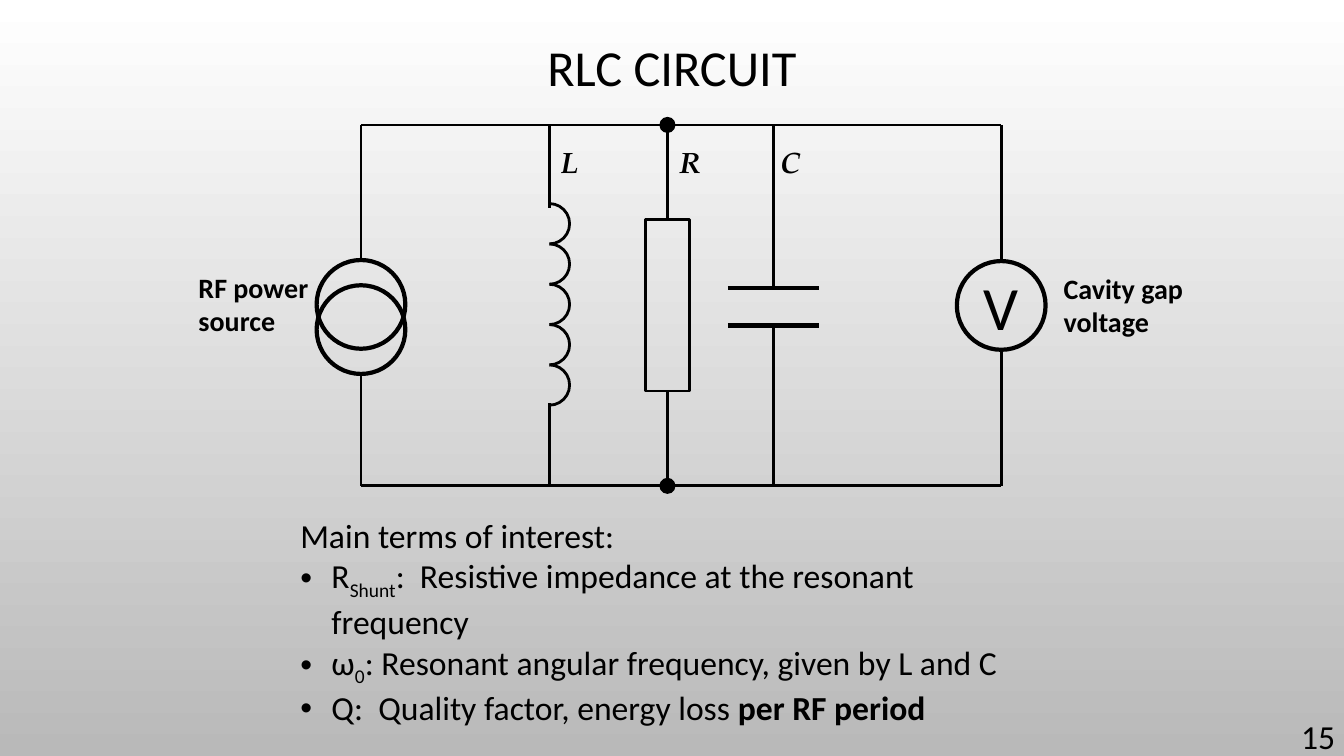
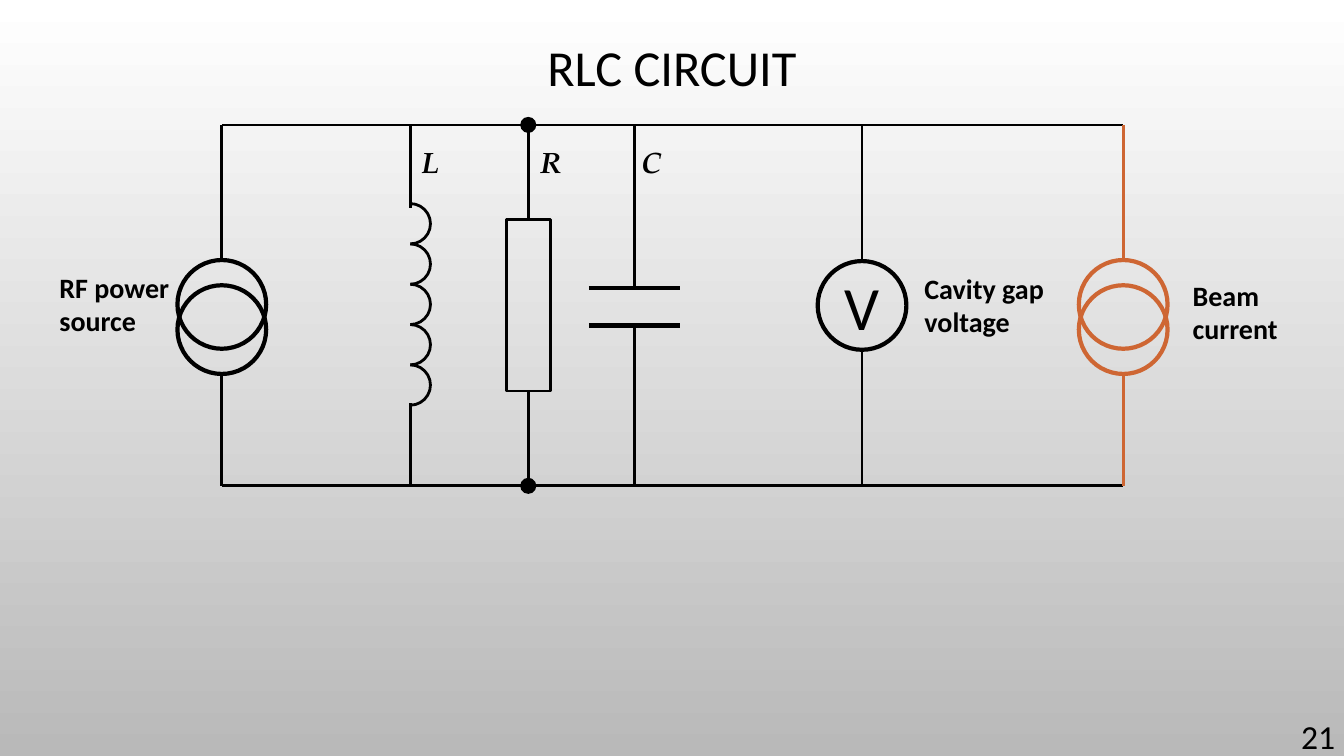
"""Build two slides showing an RLC circuit, without and with beam current."""
from lxml import etree
from pptx import Presentation
from pptx.dml.color import RGBColor
from pptx.enum.shapes import MSO_CONNECTOR as CONN, MSO_SHAPE as SHAPE
from pptx.enum.text import MSO_ANCHOR as ANCHOR, PP_ALIGN as ALIGN
from pptx.oxml.ns import qn
from pptx.util import Inches, Pt

BLACK = RGBColor(0x00, 0x00, 0x00)
WHITE = RGBColor(0xFF, 0xFF, 0xFF)
GREY = RGBColor(0xB9, 0xB9, 0xB9)
ORANGE = RGBColor(0xCE, 0x66, 0x33)
SANS, SERIF = "Calibri", "TeX Gyre Pagella"

TOP, BOTTOM = 1.24, 4.82
SOURCE_X, COIL_X, RES_X, CAP_X, METER_X, BEAM_X = 2.2, 4.07, 5.24, 6.29, 8.55, 11.14
RING, LOOP, DOT = 0.88, 0.4, 0.16
TERMS = [
    [("Main terms of interest:", {})],
    [("R", {}), ("Shunt", {"sub": True}),
     (":  Resistive impedance at the resonant frequency", {})],
    [("ω", {}), ("0", {"sub": True}),
     (": Resonant angular frequency, given by L and C", {})],
    [("Q:  Quality factor, energy loss ", {}), ("per RF period", {"bold": True})],
]


def write(p, text, size=24, font=SANS, bold=False, italic=False, sub=False, align=ALIGN.LEFT):
    p.alignment = align
    r = p.add_run()
    r.text = text
    r.font.size, r.font.name = Pt(size), font
    r.font.bold, r.font.italic = bold, italic
    r.font.color.rgb = BLACK
    if sub:
        r.font._element.set("baseline", "-25000")


def wire(s, x1, y1, x2, y2, color=BLACK, width=2):
    c = s.shapes.add_connector(CONN.STRAIGHT, Inches(x1), Inches(y1), Inches(x2), Inches(y2))
    c.line.color.rgb, c.line.width = color, Pt(width)
    etree.SubElement(c._element.spPr, qn("a:effectLst"))
    return c


prs = Presentation()
prs.slide_width, prs.slide_height = Inches(13.33), Inches(7.5)
bg = prs.slide_master.background.fill
bg.gradient()
bg.gradient_angle = 270
for stop, color, position in zip(bg.gradient_stops, (WHITE, GREY), (0, 1)):
    stop.color.rgb, stop.position = color, position

for number, dx, has_beam in ((15, 1.38, False), (21, 0, True)):
    s = prs.slides.add_slide(prs.slide_layouts[5])
    title = s.shapes.title
    title.left, title.top = Inches(1), Inches(0.14)
    title.width, title.height = Inches(11.33), Inches(1.11)
    tf = title.text_frame
    tf.vertical_anchor = ANCHOR.MIDDLE
    tf.paragraphs[0].line_spacing = 0.9
    write(tf.paragraphs[0], "RLC CIRCUIT", size=36, align=ALIGN.CENTER)

    source, coil, res, cap, meter, beam = [
        x + dx for x in (SOURCE_X, COIL_X, RES_X, CAP_X, METER_X, BEAM_X)]
    sources = [(source, BLACK)] + ([(beam, ORANGE)] if has_beam else [])
    end = beam if has_beam else meter

    wires = [(source, TOP, end, TOP), (source, BOTTOM, end, BOTTOM)]
    for x, upper, lower in ((coil, 2.06, 4), (cap, 2.86, 3.23), (meter, 2.59, 3.47)):
        wires += [(x, TOP, x, upper), (x, lower, x, BOTTOM)]
    for x, color in sources:
        wires += [(x, TOP, x, 2.58, color), (x, 3.71, x, BOTTOM, color)]
    for y in (2.86, 3.23):
        wires.append((cap - 0.45, y, cap + 0.45, y, BLACK, 3))
    for ends in wires:
        wire(s, *ends)

    outlines = [(SHAPE.ARC, coil, 2.02 + i * LOOP, LOOP, LOOP, BLACK, 2) for i in range(5)]
    outlines += [(SHAPE.OVAL, x, y, RING, RING, color, 3)
                 for x, color in sources for y in (2.83, 2.58)]
    outlines += [(SHAPE.OVAL, res, y - DOT / 2, DOT, DOT, BLACK, 0) for y in (TOP, BOTTOM)]
    outlines += [(SHAPE.RECTANGLE, res, 2.18, 0.44, 1.7, BLACK, 2),
                 (SHAPE.OVAL, meter, 2.59, RING, RING, BLACK, 3)]
    for kind, x, y, w, h, color, width in outlines:
        sp = s.shapes.add_shape(kind, Inches(x - w / 2), Inches(y), Inches(w), Inches(h))
        sp.shadow.inherit = False
        if width:
            sp.fill.background()
            sp.line.color.rgb, sp.line.width = color, Pt(width)
        else:
            sp.fill.solid()
            sp.fill.fore_color.rgb = color
            sp.line.fill.background()
        if kind == SHAPE.ARC:
            sp.adjustments[0], sp.adjustments[1] = 162, 53.82
        elif kind == SHAPE.RECTANGLE:
            wire(s, res, TOP, res, y).end_connect(sp, 0)
            wire(s, res, BOTTOM, res, y + h).end_connect(sp, 2)
        elif x == meter:
            tf = sp.text_frame
            tf.word_wrap = False
            tf.vertical_anchor = ANCHOR.MIDDLE
            write(tf.paragraphs[0], "V", size=44, align=ALIGN.CENTER)

    symbol = {"size": 21, "font": SERIF, "bold": True, "italic": True}
    caption = {"size": 20, "bold": True}
    labels = [
        (coil + 0.01, 1.38, 0.56, 0.73, "L", symbol),
        (res + 0.02, 1.38, 0.56, 0.73, "R", symbol),
        (cap - 0.03, 1.38, 0.56, 0.73, "C", symbol),
        (source - 1.71, 2.63, 1.35, 0.77, "RF power source", caption),
        (meter + 0.52, 2.64, 1.51, 0.77, "Cavity gap voltage", caption),
        (12.5, 7.1, 0.84, 0.4, str(number), {"align": ALIGN.RIGHT}),
    ]
    if has_beam:
        labels.append((beam + 0.59, 2.71, 1.35, 0.77, "Beam current", caption))
    for x, y, w, h, text, style in labels:
        tf = s.shapes.add_textbox(Inches(x), Inches(y), Inches(w), Inches(h)).text_frame
        tf.word_wrap = True
        if text == str(number):
            tf.vertical_anchor = ANCHOR.MIDDLE
        write(tf.paragraphs[0], text, **style)

    if not has_beam:
        tf = s.shapes.add_textbox(Inches(2.88), Inches(5.06), Inches(7.6), Inches(1.72)).text_frame
        tf.word_wrap = True
        for i, runs in enumerate(TERMS):
            p = tf.add_paragraph() if i else tf.paragraphs[0]
            if i:
                pPr = p._p.get_or_add_pPr()
                pPr.set("marL", str(Inches(0.31)))
                pPr.set("indent", str(-Inches(0.31)))
                etree.SubElement(pPr, qn("a:buFont"), typeface="Arial")
                etree.SubElement(pPr, qn("a:buChar"), char="•")
            for text, style in runs:
                write(p, text, **style)

prs.save("out.pptx")
